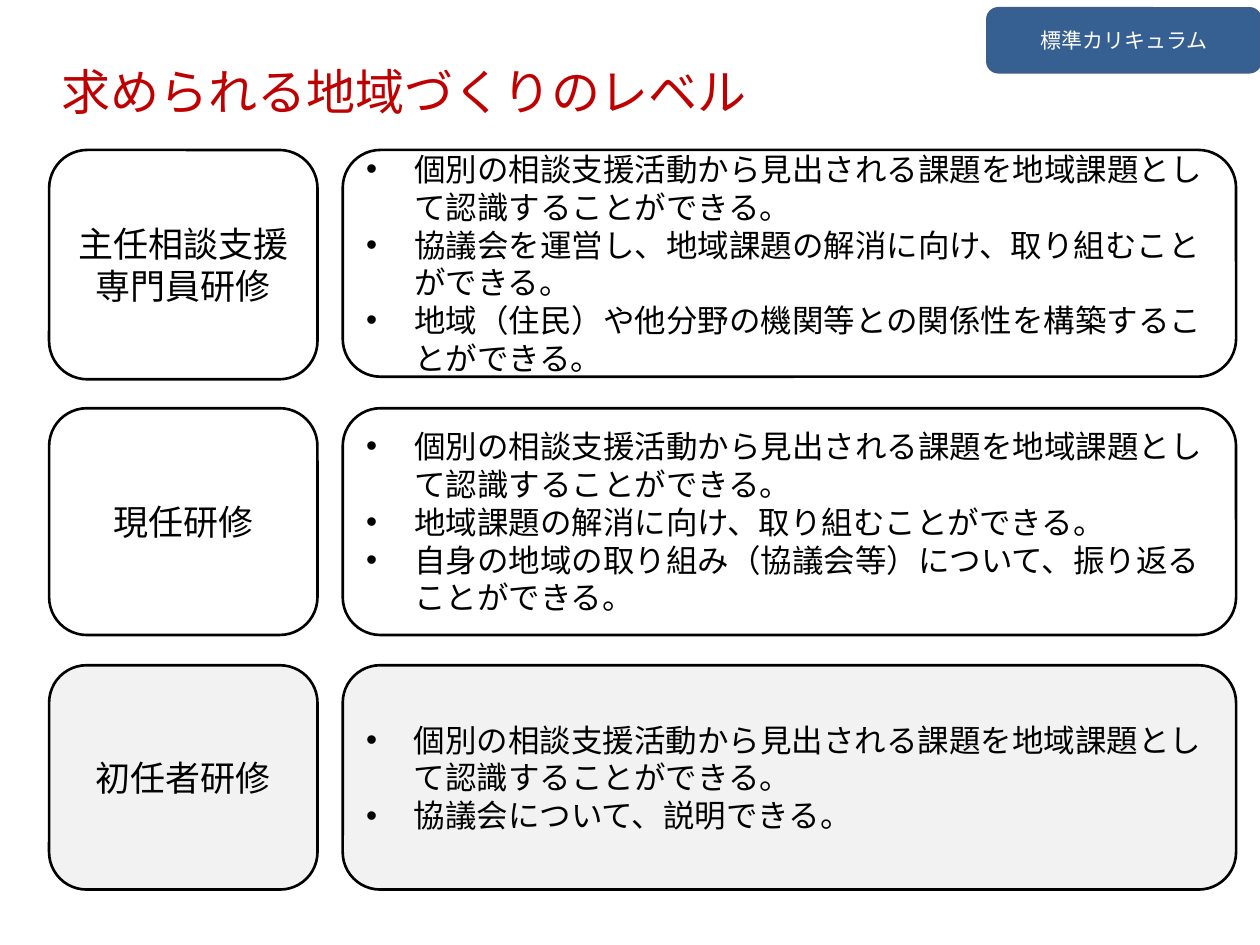
from dataclasses import dataclass

from lxml.etree import SubElement
from pptx import Presentation
from pptx.dml.color import RGBColor
from pptx.enum.shapes import MSO_SHAPE
from pptx.enum.text import MSO_ANCHOR, MSO_AUTO_SIZE, PP_ALIGN
from pptx.oxml.ns import qn
from pptx.util import Inches, Pt


@dataclass(frozen=True)
class Theme:
    title: str = "C00000"
    text: str = "000000"
    shade: str = "F2F2F2"
    badge: str = "376092"
    badge_line: str = "3A5F8C"
    badge_text: str = "FFFFFF"
    font: str = "Noto Sans CJK JP"
    badge_font: str = "Calibri"
    title_size: int = 28
    course_size: int = 20
    goal_size: int = 18
    badge_size: int = 12
    leading: float = 1.2


THEME = Theme()
INDENT = Inches(0.38)
COURSE_LEFT, COURSE_WIDTH = 0.39, 2.13
GOALS_LEFT, GOALS_WIDTH = 2.72, 7.09

COMMON_GOAL = "個別の相談支援活動から見出される課題を地域課題として認識することができる。"
LEVELS = [
    ("主任相談支援専門員研修", 1.19, 1.82, 1.8, None, [
        COMMON_GOAL,
        "協議会を運営し、地域課題の解消に向け、取り組むことができる。",
        "地域（住民）や他分野の機関等との関係性を構築することができる。",
    ]),
    ("現任研修", 3.24, 1.8, 1.8, None, [
        COMMON_GOAL,
        "地域課題の解消に向け、取り組むことができる。",
        "自身の地域の取り組み（協議会等）について、振り返ることができる。",
    ]),
    ("初任者研修", 5.28, 1.78, 1.78, THEME.shade, [
        COMMON_GOAL,
        "協議会について、説明できる。",
    ]),
]


def add_bullet(paragraph):
    properties = paragraph._p.get_or_add_pPr()
    properties.set("marL", str(INDENT))
    properties.set("indent", str(-INDENT))
    SubElement(properties, qn("a:buFont")).set("typeface", "Arial")
    SubElement(properties, qn("a:buChar")).set("char", "•")


def write_text(shape, lines, *, size, color=THEME.text, font=THEME.font,
               align=PP_ALIGN.CENTER, anchor=MSO_ANCHOR.MIDDLE, bullets=False):
    frame = shape.text_frame
    frame.word_wrap = True
    frame.auto_size = MSO_AUTO_SIZE.NONE
    frame.vertical_anchor = anchor
    frame.text = "\n".join(lines)
    for paragraph in frame.paragraphs:
        paragraph.alignment = align
        paragraph.line_spacing = Pt(size * THEME.leading)
        if bullets:
            add_bullet(paragraph)
        for run in paragraph.runs:
            run.font.size = Pt(size)
            run.font.name = font
            run.font.color.rgb = RGBColor.from_string(color)
            east_asian = SubElement(run._r.get_or_add_rPr(), qn("a:ea"))
            east_asian.set("typeface", THEME.font)


def add_panel(slide, left, top, width, height, fill=None,
              line=THEME.text, line_width=1.5):
    panel = slide.shapes.add_shape(
        MSO_SHAPE.ROUNDED_RECTANGLE,
        Inches(left), Inches(top), Inches(width), Inches(height))
    panel.shadow.inherit = False
    if fill:
        panel.fill.solid()
        panel.fill.fore_color.rgb = RGBColor.from_string(fill)
    else:
        panel.fill.background()
    panel.line.color.rgb = RGBColor.from_string(line)
    panel.line.width = Pt(line_width)
    return panel


def add_title(slide, text):
    title = slide.shapes.title
    title.left, title.top = Inches(0.39), Inches(0.44)
    title.width, title.height = Inches(9.06), Inches(0.57)
    write_text(title, [text], size=THEME.title_size, color=THEME.title,
               align=PP_ALIGN.LEFT, anchor=MSO_ANCHOR.TOP)


def add_badge(slide, text):
    badge = add_panel(slide, 7.84, 0.07, 2.16, 0.5, THEME.badge,
                      THEME.badge_line, 2)
    write_text(badge, [text], size=THEME.badge_size, color=THEME.badge_text,
               font=THEME.badge_font)


def add_level(slide, course, top, course_height, goals_height, fill, goals):
    course_panel = add_panel(slide, COURSE_LEFT, top, COURSE_WIDTH,
                             course_height, fill)
    write_text(course_panel, [course], size=THEME.course_size)
    goals_panel = add_panel(slide, GOALS_LEFT, top, GOALS_WIDTH,
                            goals_height, fill)
    write_text(goals_panel, goals, size=THEME.goal_size,
               align=PP_ALIGN.LEFT, bullets=True)


def main():
    presentation = Presentation()
    presentation.slide_width = Inches(10)
    presentation.slide_height = Inches(7.5)
    slide = presentation.slides.add_slide(presentation.slide_layouts[5])
    add_title(slide, "求められる地域づくりのレベル")
    for level in LEVELS:
        add_level(slide, *level)
    add_badge(slide, "標準カリキュラム")
    presentation.save("out.pptx")


if __name__ == "__main__":
    main()
